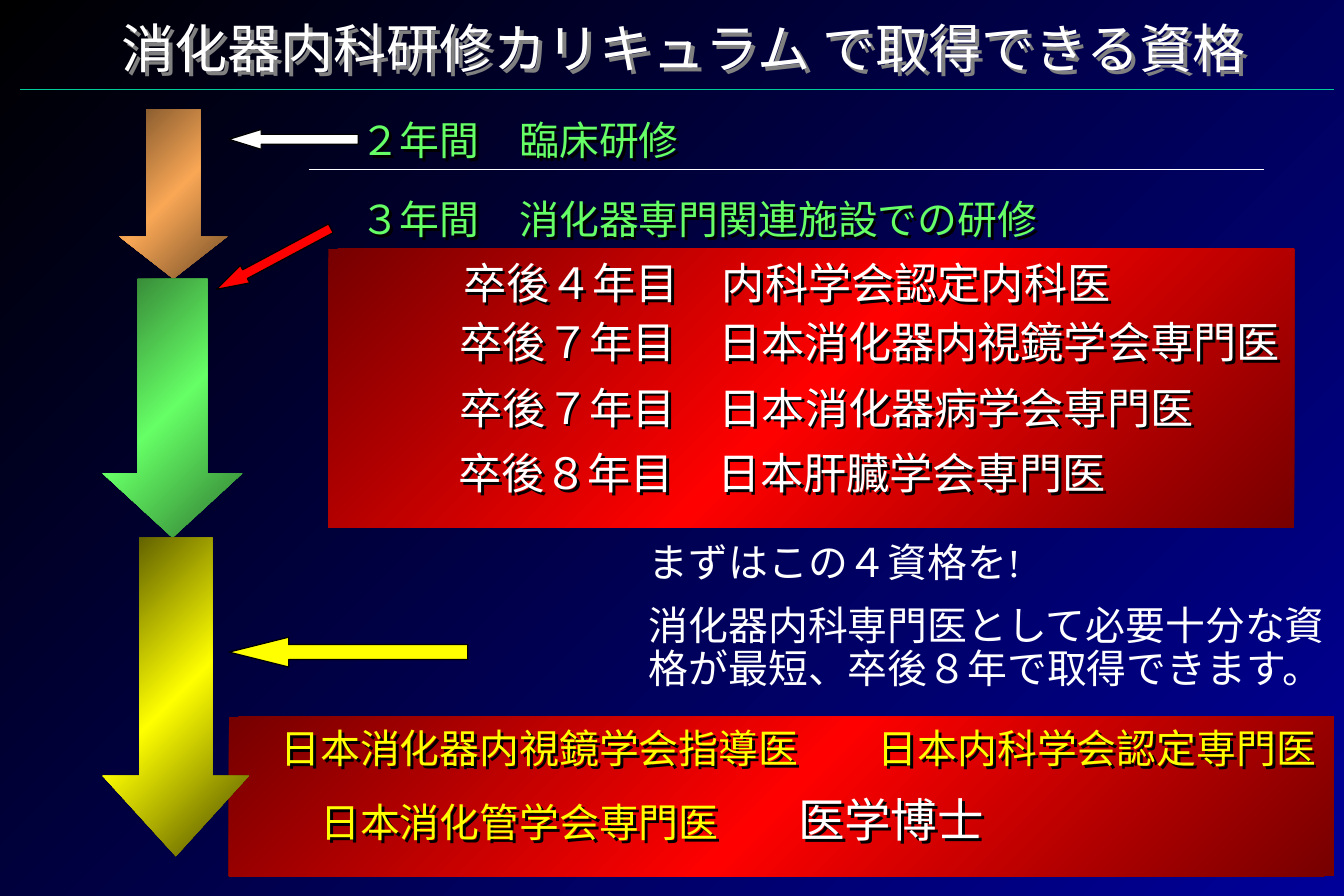
import copy
import pptx
import pptx.util
import pptx.dml.color
import pptx.enum.shapes
import pptx.oxml

Pt = pptx.util.Pt
SHAPE = pptx.enum.shapes.MSO_SHAPE
NS = "http://schemas.openxmlformats.org/drawingml/2006/main"


def rgb(value):
    return pptx.dml.color.RGBColor.from_string(value)


def paint(fill, colors):
    fill.gradient()
    fill.gradient_angle = 315
    for stop, color in zip(fill.gradient_stops, colors):
        stop.color.rgb = rgb(color)


prs = pptx.Presentation()
prs.slide_width, prs.slide_height = Pt(810), Pt(540)
s = prs.slides.add_slide(prs.slide_layouts[6])
paint(s.background.fill, ("000000", "000099"))

bands = [
    (SHAPE.RECTANGLE, (138, 432, 666, 96), (), "760000", "FF0000"),
    (SHAPE.RECTANGLE, (198, 150, 582, 168), (), "760000", "FF0000"),
    (SHAPE.DOWN_ARROW, (72, 66, 65, 102), (0.5, 0.39), "734D27", "F9A755"),
    (SHAPE.DOWN_ARROW, (62, 168, 84, 156), (0.5, 0.46), "2F762F", "66FF66"),
    (SHAPE.DOWN_ARROW, (62, 324, 88, 192), (0.5, 0.55), "464600", "FFFF00"),
]
for kind, box, adjustments, edge, middle in bands:
    sp = s.shapes.add_shape(kind, *map(Pt, box))
    sp.shadow.inherit = False
    sp.line.fill.background()
    for i, value in enumerate(adjustments):
        sp.adjustments[i] = value
    paint(sp.fill, (edge, edge))
    first = sp._element.spPr.xpath(".//a:gs")[0]
    center = copy.deepcopy(first)
    first.addnext(center)
    center.set("pos", "50000")
    sp.fill.gradient_stops[1].color.rgb = rgb(middle)

pointers = [
    ((138, 384, 144, 18), 2, 0, "FFFF00"),
    ((138, 78, 78, 12), 1.62, 0, "FFFFFF"),
    ((126, 150, 78, 12), 1.62, 331.9, "FF0000"),
]
for box, head, angle, color in pointers:
    sp = s.shapes.add_shape(SHAPE.LEFT_ARROW, *map(Pt, box))
    sp.shadow.inherit = False
    sp.rotation = angle
    sp.adjustments[1] = head
    sp.fill.solid()
    sp.fill.fore_color.rgb = rgb(color)
    sp.line.color.rgb = rgb("000000")
    sp.line.width = Pt(0.75)

for left, right, y, color in ((186, 762, 102, "FFFFFF"), (12, 804, 54, "00CC99")):
    rule = s.shapes.add_connector(
        pptx.enum.shapes.MSO_CONNECTOR.STRAIGHT, Pt(left), Pt(y), Pt(right), Pt(y))
    rule.line.color.rgb = rgb(color)
    rule.line.width = Pt(0.75)
    rule._element.spPr.append(pptx.oxml.parse_xml(f'<a:effectLst xmlns:a="{NS}"/>'))

WHITE, GREEN, YELLOW = "FFFFFF", "66FF66", "FFFF00"
texts = [
    ((66, 6, 696, 45), 32, 1, "808080", [[("消化器内科研修カリキュラム で取得できる資格", WHITE, 32)]]),
    ((210, 66, 492, 36), 24, 1, "000000", [[("２年間　臨床研修", GREEN, 24)]]),
    ((210, 114, 474, 36), 24, 1, "000000", [[("３年間　消化器専門関連施設での研修", GREEN, 24)]]),
    ((272, 151, 468, 38), 26, 1, "000000", [[("卒後４年目　内科学会認定内科医", WHITE, 26)]]),
    ((270, 186.5, 540, 38), 26, 1, "000000", [[("卒後７年目　日本消化器内視鏡学会専門医", WHITE, 26)]]),
    ((270, 226, 516, 38), 26, 1, "000000", [[("卒後７年目　日本消化器病学会専門医", WHITE, 26)]]),
    ((269, 265.5, 516, 38), 26, 1, "000000", [[("卒後８年目　日本肝臓学会専門医　", WHITE, 26)]]),
    ((384, 324, 426, 100), 24, 0.9, None, [
        [("まずはこの４資格を!", WHITE, 24)],
        [("消化器内科専門医として必要十分な資格が最短、卒後８年で取得できます。", WHITE, 24)]]),
    ((162, 432.5, 648, 87), 24, 1, "000000", [
        [("日本消化器内視鏡学会指導医　　日本内科学会認定専門医", YELLOW, 24)],
        [("　日本消化管学会専門医　　", YELLOW, 24), ("医学博士", WHITE, 28)]]),
]
for box, size, spacing, shade, paragraphs in texts:
    sp = s.shapes.add_textbox(*map(Pt, box))
    sp.shadow.inherit = False
    if shade:
        distance = Pt(3.4 if size == 32 else 2.5)
        sp._element.spPr.xpath("a:effectLst")[0].append(pptx.oxml.parse_xml(
            f'<a:outerShdw xmlns:a="{NS}" dist="{distance}" dir="2700000" algn="ctr" '
            f'rotWithShape="0"><a:srgbClr val="{shade}"/></a:outerShdw>'))
    tf = sp.text_frame
    tf.word_wrap = True
    for i, runs in enumerate(paragraphs):
        p = tf.add_paragraph() if i else tf.paragraphs[0]
        p.line_spacing = spacing
        p.space_before = Pt(size / 2 if i else 0)
        p.font.name = "Times New Roman"
        p.font.size = Pt(size)
        p.font.color.rgb = rgb(runs[0][1])
        for text, color, run_size in runs:
            r = p.add_run()
            r.text = text
            if len(runs) > 1:
                r.font.size = Pt(run_size)
                r.font.color.rgb = rgb(color)

prs.save("out.pptx")
